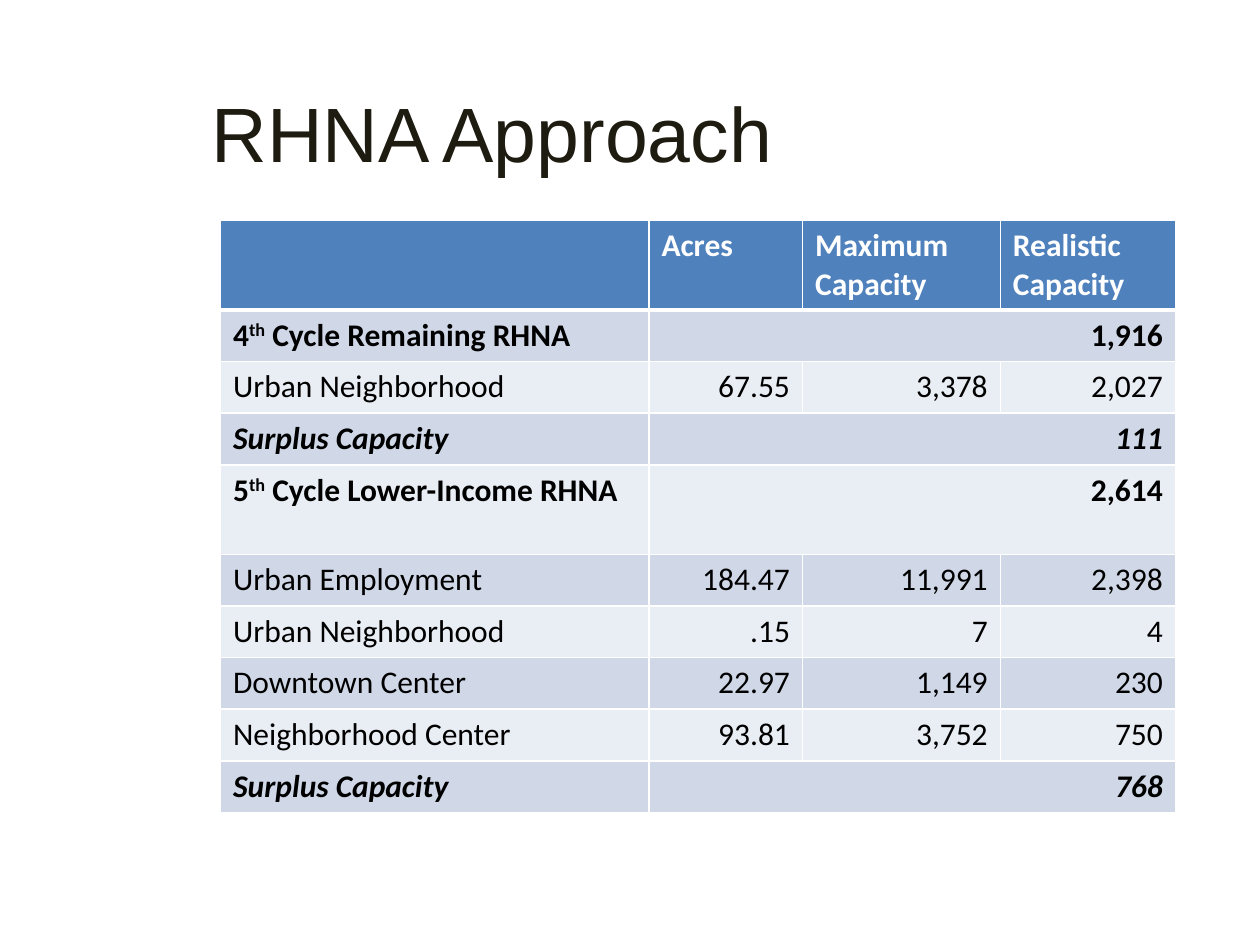
"""Build the RHNA Approach slide with its capacity table."""
import pptx
import pptx.dml.color
import pptx.enum.text
import pptx.oxml
import pptx.oxml.ns
import pptx.util
from pptx.util import Inches

COLORS = {
    "title": "1E1C11",
    "header": "4F81BD",
    "odd_band": "D0D8E8",
    "even_band": "E9EDF4",
    "white": "FFFFFF",
    "body": "000000",
}
STYLES = {
    "title": {"name": "Arial", "size": pptx.util.Pt(44)},
    "plain": {"name": "Calibri", "size": pptx.util.Pt(18), "bold": False},
    "total": {"name": "Calibri", "size": pptx.util.Pt(18), "bold": True},
    "surplus": {"name": "Calibri", "size": pptx.util.Pt(18), "bold": True, "italic": True},
}
COLUMN_WIDTHS = [3.4, 1.22, 1.57, 1.39]
ROW_HEIGHT, TALL_ROW_HEIGHT = 0.41, 0.71
TALL_ROWS = {0, 4}
HEADINGS = ["", "Acres", "Maximum Capacity", "Realistic Capacity"]
CAPACITY = [
    ("total", ["4^th^ Cycle Remaining RHNA", "1,916"]),
    ("plain", ["Urban Neighborhood", "67.55", "3,378", "2,027"]),
    ("surplus", ["Surplus Capacity", "111"]),
    ("total", ["5^th^ Cycle Lower-Income RHNA", "2,614"]),
    ("plain", ["Urban Employment", "184.47", "11,991", "2,398"]),
    ("plain", ["Urban Neighborhood", ".15", "7", "4"]),
    ("plain", ["Downtown Center", "22.97", "1,149", "230"]),
    ("plain", ["Neighborhood Center", "93.81", "3,752", "750"]),
    ("surplus", ["Surplus Capacity", "768"]),
]


def rgb(color):
    return pptx.dml.color.RGBColor.from_string(COLORS[color])


def write_text(frame, text, style, color, align="LEFT"):
    paragraph = frame.paragraphs[0]
    paragraph.alignment = getattr(pptx.enum.text.PP_ALIGN, align)
    for index, part in enumerate(text.split("^")):
        if not part:
            continue
        run = paragraph.add_run()
        run.text = part
        for attribute, value in STYLES[style].items():
            setattr(run.font, attribute, value)
        run.font.color.rgb = rgb(color)
        if index % 2:
            run._r.get_or_add_rPr().set("baseline", "30000")


def set_borders(cell, top, bottom):
    properties = cell._tc.get_or_add_tcPr()
    for side, points in {"L": 1, "R": 1, "T": top, "B": bottom}.items():
        properties.append(pptx.oxml.parse_xml(
            f'<a:ln{side} {pptx.oxml.ns.nsdecls("a")} w="{pptx.util.Pt(points)}">'
            f'<a:solidFill><a:srgbClr val="{COLORS["white"]}"/></a:solidFill>'
            f'</a:ln{side}>'))


def add_title(slide, text):
    frame = slide.shapes.add_textbox(
        Inches(1.58), Inches(0.42), Inches(7), Inches(1.25)).text_frame
    frame.word_wrap = True
    frame.vertical_anchor = pptx.enum.text.MSO_ANCHOR.MIDDLE
    write_text(frame, text, "title", "title")


def fill_row(table, row, texts, style, band, color, number_align):
    for column in range(len(COLUMN_WIDTHS)):
        cell = table.cell(row, column)
        set_borders(cell, 3 if row == 1 else 1, 3 if row == 0 else 1)
        cell.fill.solid()
        cell.fill.fore_color.rgb = rgb(band)
    if len(texts) < len(COLUMN_WIDTHS):
        table.cell(row, 1).merge(table.cell(row, len(COLUMN_WIDTHS) - 1))
    for column, text in enumerate(texts):
        write_text(table.cell(row, column).text_frame, text, style, color,
                   number_align if column else "LEFT")


def add_capacity_table(slide):
    heights = [TALL_ROW_HEIGHT if row in TALL_ROWS else ROW_HEIGHT
               for row in range(len(CAPACITY) + 1)]
    table = slide.shapes.add_table(
        len(heights), len(COLUMN_WIDTHS), Inches(1.75), Inches(1.75),
        Inches(sum(COLUMN_WIDTHS)), Inches(sum(heights))).table
    for column, width in zip(table.columns, COLUMN_WIDTHS):
        column.width = Inches(width)
    for row, height in zip(table.rows, heights):
        row.height = Inches(height)
    fill_row(table, 0, HEADINGS, "total", "header", "white", "LEFT")
    for row, (style, texts) in enumerate(CAPACITY, start=1):
        band = "odd_band" if row % 2 else "even_band"
        fill_row(table, row, texts, style, band, "body", "RIGHT")


def main():
    presentation = pptx.Presentation()
    presentation.slide_width = Inches(10)
    presentation.slide_height = Inches(7.5)
    slide = presentation.slides.add_slide(presentation.slide_layouts[6])
    add_title(slide, "RHNA Approach")
    add_capacity_table(slide)
    presentation.save("out.pptx")


if __name__ == "__main__":
    main()
